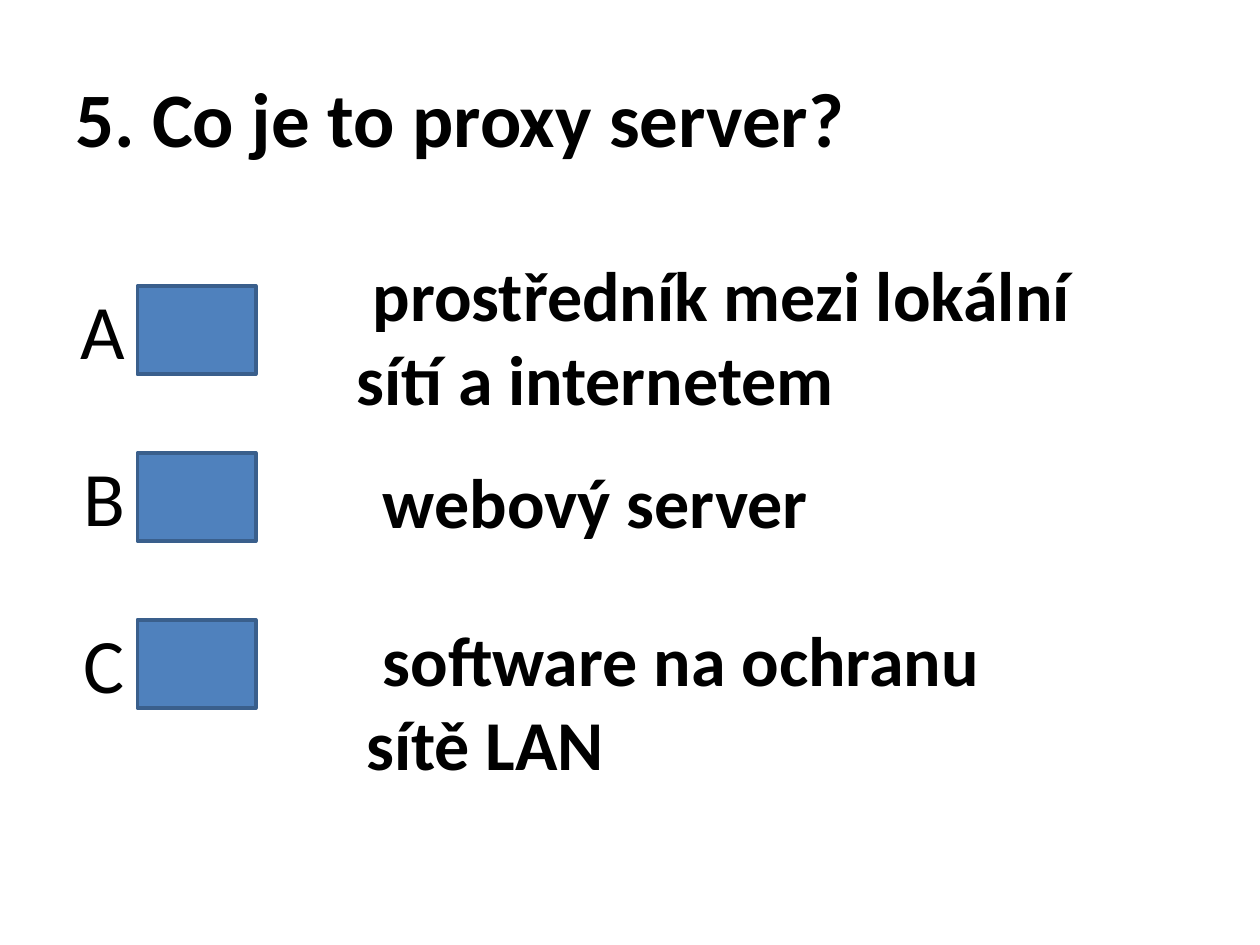
from pptx import Presentation
from pptx.dml.color import RGBColor
from pptx.enum.shapes import MSO_SHAPE
from pptx.enum.text import MSO_ANCHOR, PP_ALIGN
from pptx.util import Inches, Pt

FONT = "Calibri"
COLORS = {"text": "000000", "fill": "4F81BD", "line": "3A5F8C"}

# Letter, answer, and the answer's left, top, width and height
ANSWERS = [
    ("A", "prostředník mezi lokální sítí a internetem", (2.73, 1.95, 6.33, 1.45)),
    ("B", "webový server", (2.81, 3.59, 4.69, 0.77)),
    ("C", "software na ochranu sítě LAN", (2.81, 4.84, 5.23, 1.45)),
]
TOP, STEP = 2.27, 1.325


def color(name):
    return RGBColor.from_string(COLORS[name])


def add_text(slide, text, box, size=44, bold=False, align=PP_ALIGN.LEFT,
             anchor=MSO_ANCHOR.TOP, indent=0):
    frame = slide.shapes.add_textbox(*map(Inches, box)).text_frame
    frame.word_wrap = True
    frame.vertical_anchor = anchor
    par = frame.paragraphs[0]
    par.alignment = align
    if indent:
        par._p.get_or_add_pPr().set("indent", str(Inches(indent)))
    run = par.add_run()
    run.text = text
    font = run.font
    font.name, font.size, font.bold = FONT, Pt(size), bold
    font.color.rgb = color("text")


def add_button(slide, box):
    button = slide.shapes.add_shape(MSO_SHAPE.ACTION_BUTTON_CUSTOM, *map(Inches, box))
    button.shadow.inherit = False
    button.fill.solid()
    button.fill.fore_color.rgb = color("fill")
    button.line.color.rgb = color("line")
    button.line.width = Pt(2)


def main():
    deck = Presentation()
    deck.slide_width, deck.slide_height = Inches(10), Inches(7.5)
    slide = deck.slides.add_slide(deck.slide_layouts[6])

    # Question
    add_text(slide, "5. Co je to proxy server?", (0.5, 0.3, 9, 1.25),
             bold=True, anchor=MSO_ANCHOR.MIDDLE)

    # Answers: letter, button, wording
    for row, (letter, answer, box) in enumerate(ANSWERS):
        top = TOP + row * STEP
        add_text(slide, letter, (0, top - 0.08, 1.09, 0.84), align=PP_ALIGN.RIGHT)
        add_button(slide, (1.09, top, 0.94, 0.7))
        add_text(slide, answer, box, size=40, bold=True, indent=0.13)

    deck.save("out.pptx")


if __name__ == "__main__":
    main()
